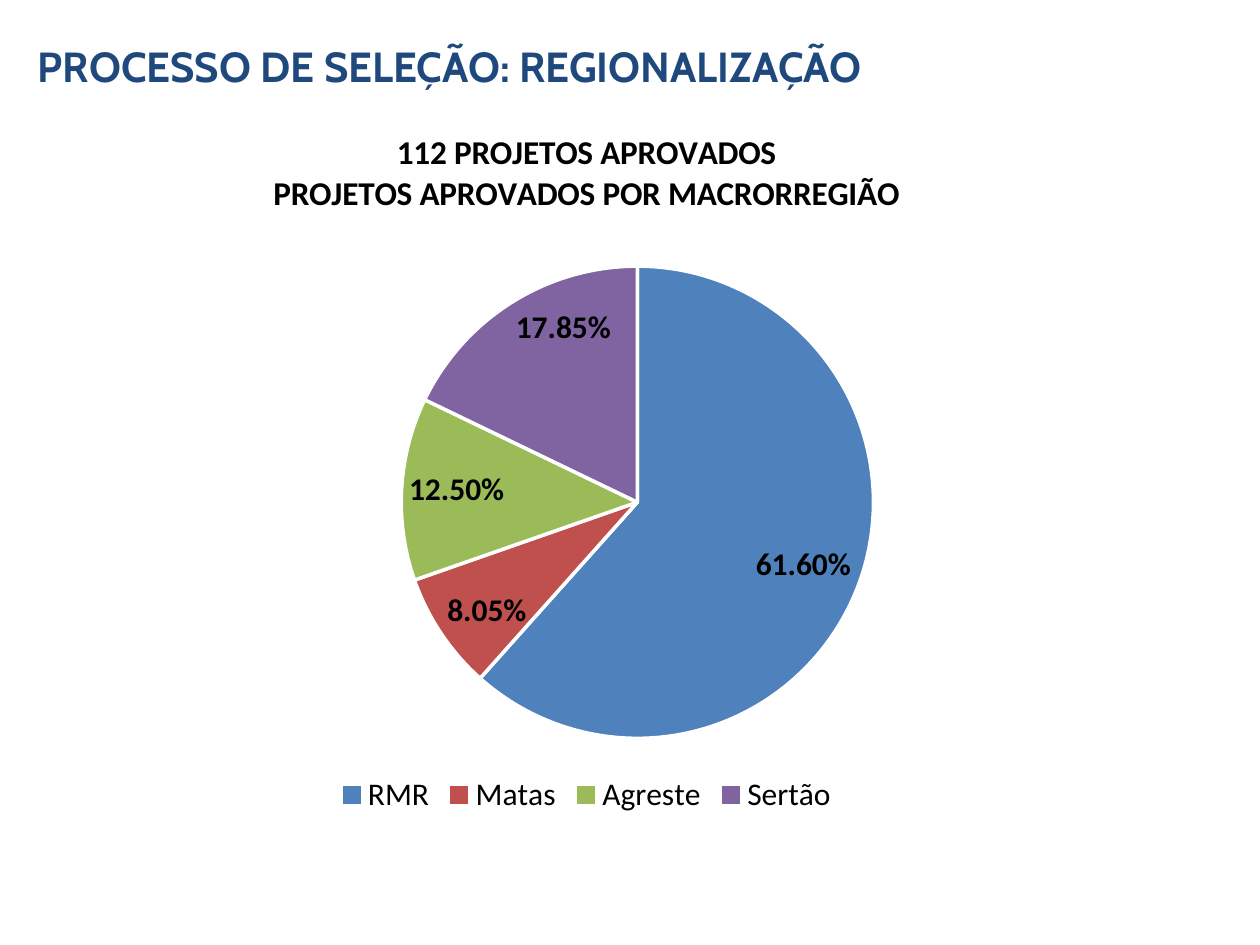
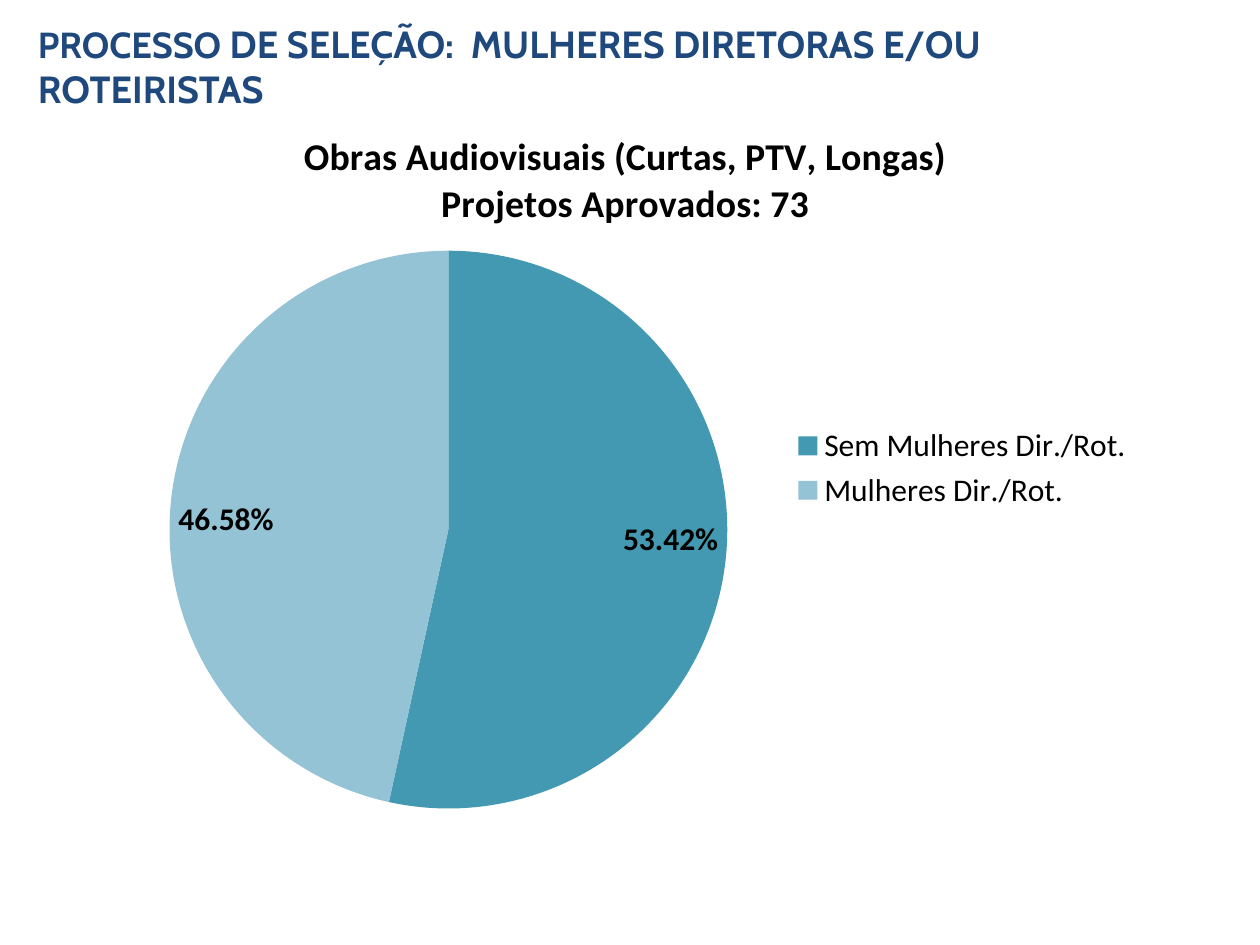
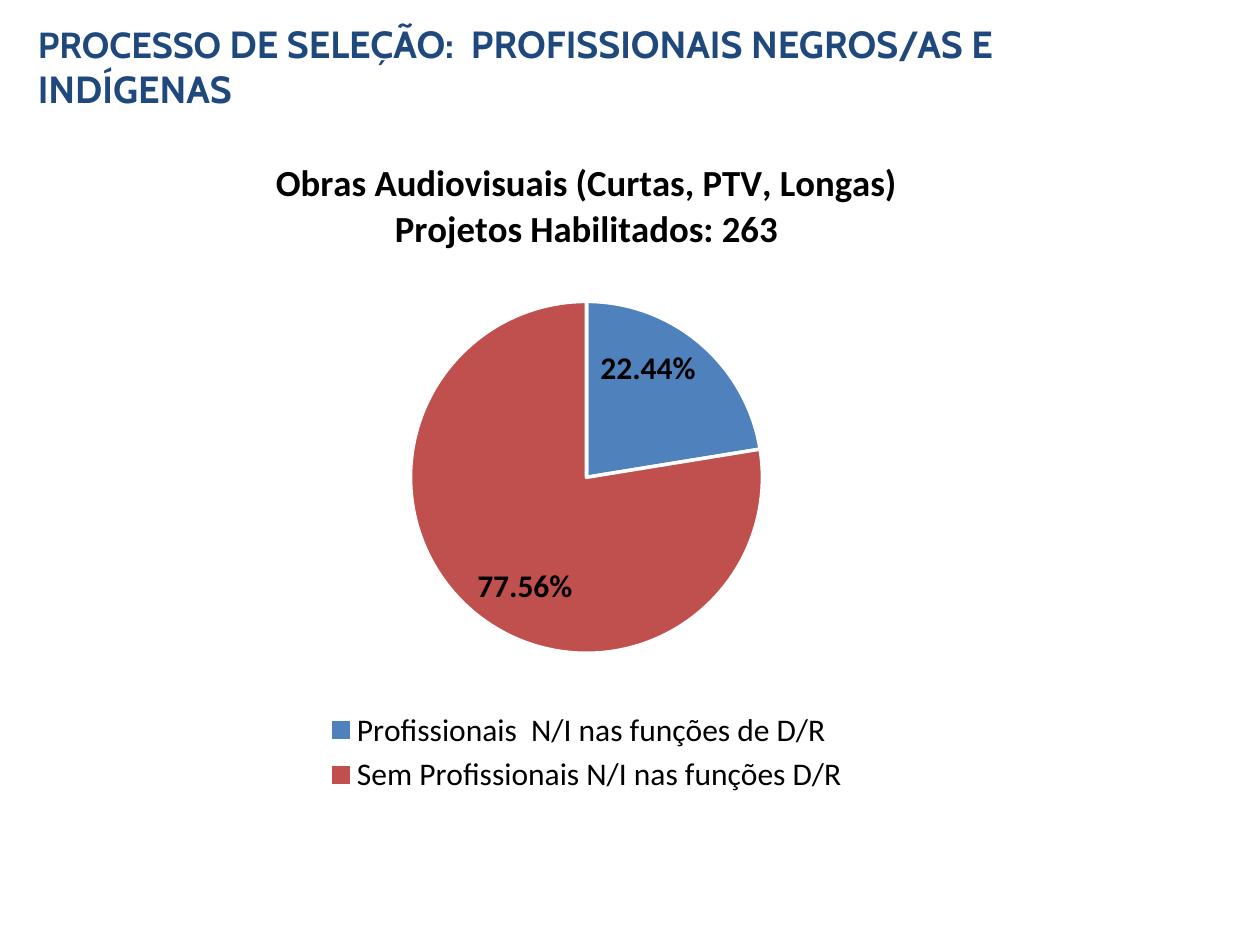
from lxml import etree
from pptx import Presentation
from pptx import util as u
from pptx.chart.data import CategoryChartData
from pptx.dml.color import RGBColor
from pptx.enum import chart as charts, text
from pptx.oxml.ns import qn

COLORS = {
    "title": "1F497D", "text": "000000", "white": "FFFFFF",
    "blue": "4F81BD", "red": "C0504D", "green": "9BBB59", "purple": "8064A2",
    "teal": "4399B1", "light teal": "93C3D5",
}
TITLE_FONT, CHART_FONT = "Cabin", "Calibri"
BOTTOM, RIGHT = charts.XL_LEGEND_POSITION.BOTTOM, charts.XL_LEGEND_POSITION.RIGHT

# Boxes are left, top, width, height in inches; pies are shares of their chart
PIE_SLIDES = [
    {
        "title": [("PROCESSO DE SELEÇÃO: REGIONALIZAÇÃO", 24)],
        "heading": ["112 PROJETOS APROVADOS", "PROJETOS APROVADOS POR MACRORREGIÃO"],
        "heading_size": 19,
        "box": (0.98, 0.84, 7.35, 5.67), "pie": (0.3, 0.22, 0.51, 0.67),
        "legend": BOTTOM, "outline": True,
        "slices": [("RMR", 0.616, "blue"), ("Matas", 0.0805, "red"),
                   ("Agreste", 0.125, "green"), ("Sertão", 0.1785, "purple")],
    },
    {
        "title": [("PROCESSO", 20.7),
                  (" DE SELEÇÃO:  MULHERES DIRETORAS E/OU ROTEIRISTAS", 21.6)],
        "heading": ["Obras Audiovisuais (Curtas, PTV, Longas)", "Projetos Aprovados: 73"],
        "heading_size": 21.6,
        "box": (0.83, 0.84, 8.27, 5.75), "pie": (0.06, 0.2, 0.54, 0.77),
        "legend": RIGHT, "outline": False,
        "slices": [("Sem Mulheres Dir./Rot.", 0.5342, "teal"),
                   ("Mulheres Dir./Rot.", 0.4658, "light teal")],
    },
    {
        "title": [("PROCESSO", 20.7),
                  (" DE SELEÇÃO:  PROFISSIONAIS NEGROS/AS E INDÍGENAS", 21.6)],
        "heading": ["Obras Audiovisuais (Curtas, PTV, Longas)", "Projetos Habilitados: 263"],
        "heading_size": 21,
        "box": (0.98, 1.07, 7.35, 5.28), "pie": (0.31, 0.25, 0.38, 0.53),
        "legend": BOTTOM, "outline": True,
        "slices": [("Profissionais  N/I nas funções de D/R", 0.2244, "blue"),
                   ("Sem Profissionais N/I nas funções D/R", 0.7756, "red")],
    },
]


def add_text(paragraph, content, size, font=CHART_FONT, color="text", bold=True):
    run = paragraph.add_run()
    run.text = content
    run.font.name, run.font.size, run.font.bold = font, u.Pt(size), bold
    run.font.color.rgb = RGBColor.from_string(COLORS[color])


def place_pie(chart, shares):
    plot_area = chart._chartSpace.chart.plotArea
    for layout in plot_area.findall(qn("c:layout")):
        plot_area.remove(layout)
    layout = etree.Element(qn("c:layout"))
    manual = etree.SubElement(layout, qn("c:manualLayout"))
    settings = [("layoutTarget", "inner"), ("xMode", "edge"), ("yMode", "edge")]
    for tag, value in settings + list(zip("xywh", shares)):
        etree.SubElement(manual, qn(f"c:{tag}")).set("val", str(value))
    plot_area.insert(0, layout)


presentation = Presentation()
presentation.slide_width, presentation.slide_height = u.Inches(10), u.Inches(7.5)
title_only = presentation.slide_layouts[5]

# Shared title position
master_title = title_only.placeholders[0]
master_title.left, master_title.top = u.Inches(0.2), u.Inches(0.21)
master_title.width, master_title.height = u.Inches(8.9), u.Inches(0.63)

for content in PIE_SLIDES:
    slide = presentation.slides.add_slide(title_only)

    # Slide title
    frame = slide.shapes.title.text_frame
    frame.word_wrap = True
    frame.auto_size = text.MSO_AUTO_SIZE.NONE
    frame.vertical_anchor = text.MSO_ANCHOR.MIDDLE
    frame.paragraphs[0].alignment = text.PP_ALIGN.LEFT
    for words, size in content["title"]:
        add_text(frame.paragraphs[0], words, size, font=TITLE_FONT, color="title")

    # Pie chart
    names, values, fills = zip(*content["slices"])
    data = CategoryChartData(number_format="0.00%")
    data.categories = names
    data.add_series("Series 1", values)
    box = [u.Inches(length) for length in content["box"]]
    chart = slide.shapes.add_chart(charts.XL_CHART_TYPE.PIE, *box, data).chart
    chart.font.name, chart.font.size = CHART_FONT, u.Pt(18)
    chart.font.color.rgb = RGBColor.from_string(COLORS["text"])
    place_pie(chart, content["pie"])

    # Chart heading
    chart.has_title = True
    heading = chart.chart_title.text_frame
    for index, line in enumerate(content["heading"]):
        paragraph = heading.add_paragraph() if index else heading.paragraphs[0]
        add_text(paragraph, line, content["heading_size"])
    chart.chart_title.include_in_layout = False

    # Legend
    chart.has_legend = True
    chart.legend.position = content["legend"]
    chart.legend.include_in_layout = False
    chart.legend.font.name, chart.legend.font.size = CHART_FONT, u.Pt(18)

    # Slices and their labels
    plot = chart.plots[0]
    for index, fill in enumerate(fills):
        slice_format = plot.series[0].points[index].format
        slice_format.fill.solid()
        slice_format.fill.fore_color.rgb = RGBColor.from_string(COLORS[fill])
        if content["outline"]:
            slice_format.line.color.rgb = RGBColor.from_string(COLORS["white"])
            slice_format.line.width = u.Pt(2)
        else:
            slice_format.line.fill.background()
    plot.has_data_labels = True
    labels = plot.data_labels
    labels.show_value, labels.show_percentage = True, False
    labels.number_format, labels.number_format_is_linked = "0.00%", False
    labels.position = charts.XL_LABEL_POSITION.INSIDE_END
    labels.font.name, labels.font.size, labels.font.bold = CHART_FONT, u.Pt(18), True
    labels.font.color.rgb = RGBColor.from_string(COLORS["text"])

presentation.save("out.pptx")
